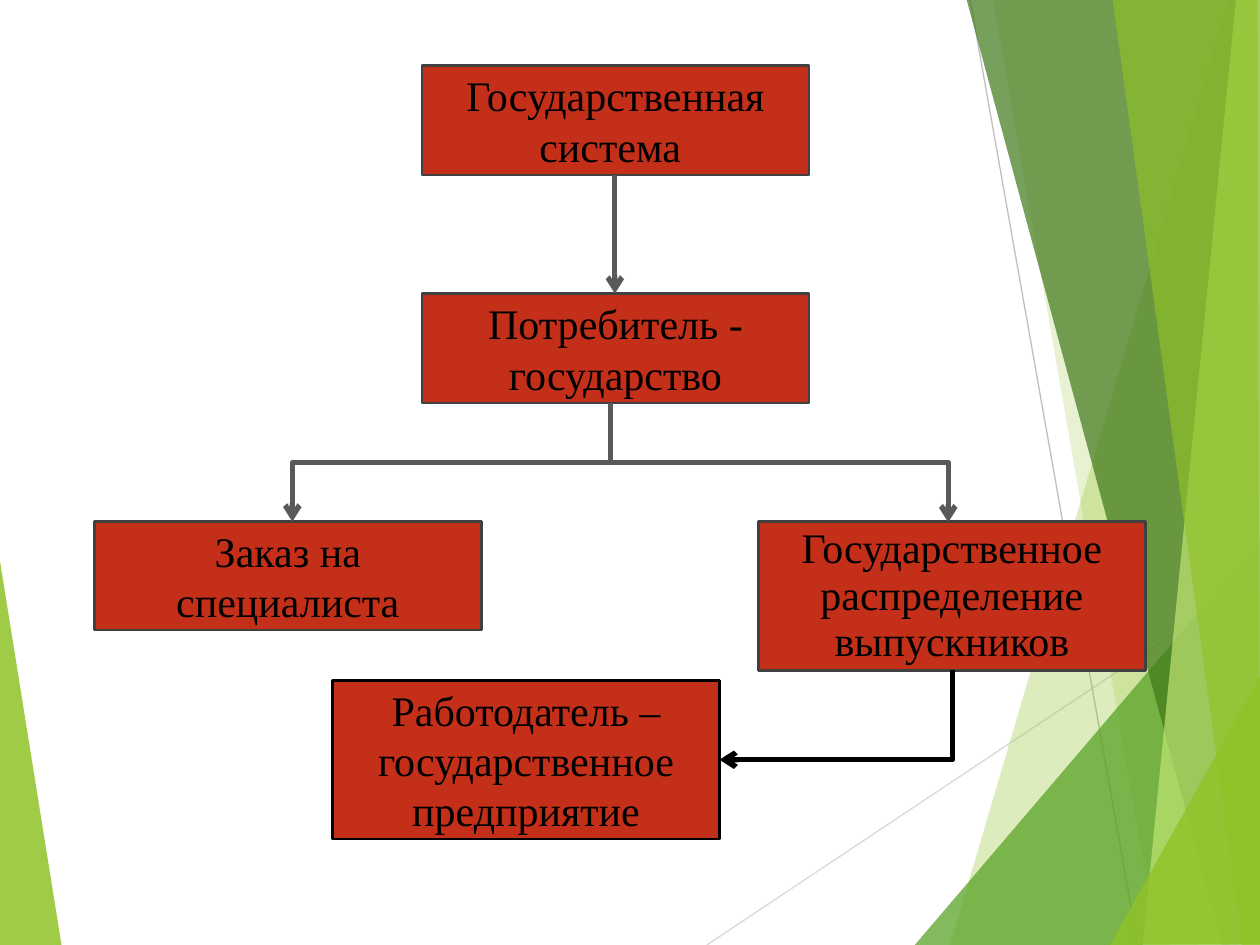
from lxml.etree import SubElement
from pptx import Presentation
from pptx.dml.color import RGBColor
from pptx.enum.shapes import MSO_CONNECTOR as Link, MSO_SHAPE as Shape
from pptx.enum.text import MSO_ANCHOR as Anchor, PP_ALIGN as Align
from pptx.oxml.ns import qn
from pptx.util import Inches, Pt

FACETS = [
    ("90C226", 85, [(-0.01, 4.39), (0.49, 7.51), (-0.01, 7.5)]),
    ("90C226", 30, [(9.75, 0), (7.54, 7.5), (10.02, 7.51), (10.01, 0.01)]),
    ("90C226", 20, [(7.88, -0.01), (9.19, 7.5), (10.01, 7.5), (10.01, -0.01)]),
    ("54A021", 72, [(7.26, 7.5), (10, 4.29), (10.01, 7.5)]),
    ("3F7819", 70, [(7.67, -0.01), (9.7, 7.5), (10.01, 7.49), (10.01, -0.01)]),
    ("C0E474", 70, [(9.81, -0.01), (9.07, 7.5), (10.01, 7.5), (10, -0.01)]),
    ("90C226", 65, [(8.83, -0.01), (9.86, 7.5), (10, 7.5), (9.98, -0.01)]),
    ("90C226", 80, [(8.81, 7.5), (10.01, 5.35), (10.01, 7.49)]),
]
RAYS = [("D9D9D9", (5.61, 7.5), (10.01, 4.57)), ("BFBFBF", (7.7, 0), (9.03, 7.5))]

BOX_WIDTH = 3.07
BOXES = [
    (6.02, 4.14, 1.18, "404040", ["Государственное распределение выпускников"], 0.93),
    (3.35, 0.52, 0.87, "404040", ["Государственная", "система "]),
    (3.35, 2.33, 0.87, "404040", ["Потребитель - государство"]),
    (2.64, 5.4, 1.26, "000000", ["Работодатель – государственное предприятие"]),
    (0.75, 4.14, 0.86, "404040", ["Заказ на специалиста"]),
]
ELBOWS = [
    ("bentConnector3", (5.71, 2.33, 0.95, 2.68), 270, "flipH", "595959"),
    ("bentConnector2", (2.32, 3.67, 2.56, 0.47), 180, "flipV", "595959"),
    ("bentConnector2", (6.28, 4.75, 0.71, 1.85), 90, None, "000000"),
]


def color(value):
    return RGBColor.from_string(value)


def add_facet(page, fill, opacity, points):
    corners = [(Inches(x), Inches(y)) for x, y in points]
    builder = page.shapes.build_freeform(*corners[0], scale=1.0)
    builder.add_line_segments(corners[1:], close=True)
    facet = builder.convert_to_shape()
    facet.shadow.inherit = False
    facet.fill.solid()
    facet.fill.fore_color.rgb = color(fill)
    facet.line.fill.background()
    tint = facet.fill._xPr.find(qn("a:solidFill"))[0]
    SubElement(tint, qn("a:alpha")).set("val", str(opacity * 1000))


def add_line(page, start, end, stroke, width, kind=Link.STRAIGHT, arrow=False):
    line = page.shapes.add_connector(kind, *map(Inches, start + end))
    line.line.color.rgb = color(stroke)
    line.line.width = Pt(width)
    if arrow:
        SubElement(line.line._get_or_add_ln(), qn("a:tailEnd")).set("type", "arrow")
    SubElement(line._element.spPr, qn("a:effectLst"))
    return line


def add_elbow(page, preset, frame, angle, flip, stroke):
    left, top, width, height = frame
    elbow = add_line(page, (left, top), (left + width, top + height), stroke, 3, Link.ELBOW, True)
    properties = elbow._element.spPr
    properties.find(qn("a:prstGeom")).set("prst", preset)
    transform = properties.find(qn("a:xfrm"))
    transform.set("rot", str(angle * 60000))
    if flip:
        transform.set(flip, "1")


def add_box(page, left, top, height, border, lines, spacing=1.0):
    box = page.shapes.add_shape(Shape.RECTANGLE, *map(Inches, (left, top, BOX_WIDTH, height)))
    box.shadow.inherit = False
    box.fill.solid()
    box.fill.fore_color.rgb = color("C42F1A")
    box.line.color.rgb = color(border)
    box.line.width = Pt(1.5)
    frame = box.text_frame
    frame.word_wrap = True
    frame.vertical_anchor = Anchor.MIDDLE
    frame.margin_top = frame.margin_bottom = Inches(0)
    for index, text in enumerate(lines):
        para = frame.add_paragraph() if index else frame.paragraphs[0]
        para.alignment = Align.CENTER
        para.line_spacing = spacing
        span = para.add_run()
        span.text = text
        span.font.name = "Times New Roman"
        span.font.size = Pt(24)
        span.font.color.rgb = color("000000")


def add_backdrop(page):
    add_facet(page, *FACETS[0])
    for stroke, start, end in RAYS:
        add_line(page, start, end, stroke, 0.75)
    for facet in FACETS[1:]:
        add_facet(page, *facet)


def add_scheme(page):
    for box in BOXES:
        add_box(page, *box)
    add_line(page, (4.88, 1.39), (4.88, 2.33), "595959", 3, arrow=True)
    for elbow in ELBOWS:
        add_elbow(page, *elbow)


def main():
    deck = Presentation()
    deck.slide_width, deck.slide_height = Inches(10), Inches(7.5)
    page = deck.slides.add_slide(deck.slide_layouts[6])
    add_backdrop(page)
    add_scheme(page)
    deck.save("out.pptx")


if __name__ == "__main__":
    main()
